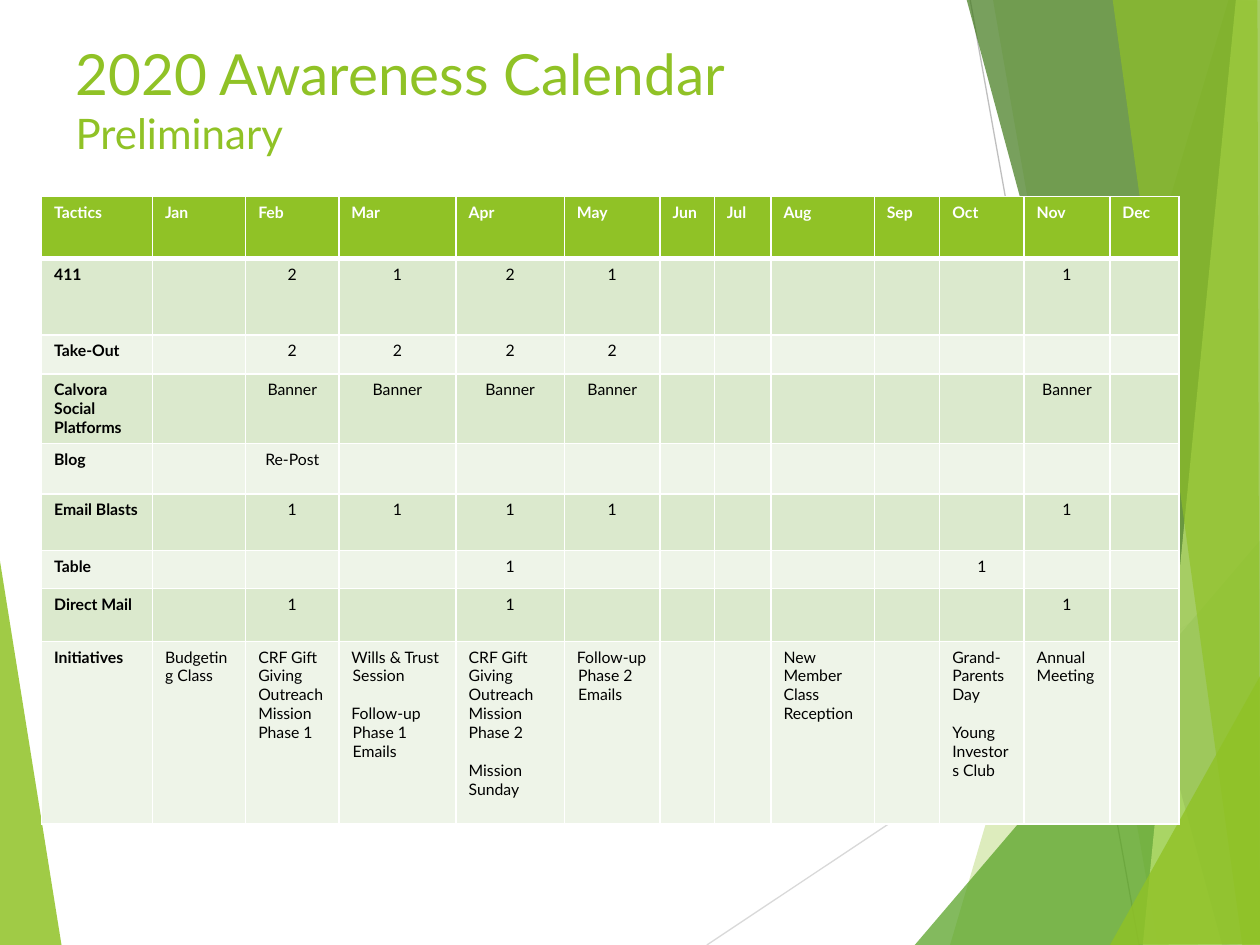
from lxml import etree
from pptx import Presentation
from pptx.dml.color import RGBColor
from pptx.enum.shapes import MSO_CONNECTOR
from pptx.enum.text import MSO_ANCHOR, MSO_AUTO_SIZE, PP_ALIGN
from pptx.oxml.ns import qn
from pptx.util import Pt

PX = 9144
FONT = "Lato"
GREEN = "90C226"
WHITE = "FFFFFF"


def rgb(value):
    return RGBColor.from_string(value)


def style_runs(paragraph, size, color, bold=False):
    for run in paragraph.runs:
        run.font.name = FONT
        run.font.size = Pt(size)
        run.font.bold = bold
        run.font.color.rgb = rgb(color)


presentation = Presentation()
presentation.slide_width = 1000 * PX
presentation.slide_height = 750 * PX
slide = presentation.slides.add_slide(presentation.slide_layouts[5])
shapes = slide.shapes

lines = [
    ((561, 750), (1001, 457), "D9D9D9"),
    ((770, 0), (904, 750), "BFBFBF"),
]
facets = [
    ([(-1, 439), (49, 751), (-1, 750)], GREEN, 85),
    ([(975, 0), (754, 750), (1002, 751), (1001, 1)], GREEN, 30),
    ([(788, -1), (919, 750), (1001, 750), (1001, -1)], GREEN, 20),
    ([(726, 750), (1000, 429), (1001, 750)], "54A021", 72),
    ([(767, -1), (970, 750), (1001, 749), (1001, -1)], "3F7819", 70),
    ([(981, -1), (907, 750), (1001, 750), (1000, -1)], "C0E474", 70),
    ([(883, -1), (986, 750), (1000, 750), (998, -1)], GREEN, 65),
    ([(881, 750), (1001, 535), (1001, 749)], GREEN, 80),
]

for (x1, y1), (x2, y2), color in lines:
    line = shapes.add_connector(MSO_CONNECTOR.STRAIGHT, x1 * PX, y1 * PX, x2 * PX, y2 * PX)
    line.line.color.rgb = rgb(color)
    line.line.width = Pt(0.75)
    etree.SubElement(line._element.spPr, qn("a:effectLst"))

for points, color, opacity in facets:
    builder = shapes.build_freeform(*points[0], scale=PX)
    builder.add_line_segments(points[1:], close=True)
    facet = builder.convert_to_shape()
    facet.shadow.inherit = False
    facet.line.fill.background()
    facet.fill.solid()
    facet.fill.fore_color.rgb = rgb(color)
    color_element = facet._element.spPr.find(".//" + qn("a:srgbClr"))
    etree.SubElement(color_element, qn("a:alpha"), val=str(opacity * 1000))

title = shapes.title
title.left, title.top, title.width, title.height = (n * PX for n in (50, 26, 900, 78))
title_frame = title.text_frame
title_frame.text = "2020 Awareness Calendar\vPreliminary"
title_frame.word_wrap = True
title_frame.auto_size = MSO_AUTO_SIZE.NONE
title_frame.vertical_anchor = MSO_ANCHOR.TOP
heading = title_frame.paragraphs[0]
heading.alignment = PP_ALIGN.LEFT
style_runs(heading, 32.4, GREEN)
heading.runs[1].font.size = Pt(24)
shapes._spTree.append(title._element)

months = ["Jan", "Feb", "Mar", "Apr", "May", "Jun", "Jul", "Aug", "Sep", "Oct", "Nov", "Dec"]
column_widths = [88, 74, 74, 93, 86, 76, 43, 45, 82, 52, 67, 68, 55]
tactics = [
    ("411", 61, {"Feb": "2", "Mar": "1", "Apr": "2", "May": "1", "Nov": "1"}),
    ("Take-Out", 31, dict.fromkeys(["Feb", "Mar", "Apr", "May"], "2")),
    ("Calvora Social Platforms", 55, dict.fromkeys(["Feb", "Mar", "Apr", "May", "Nov"], "Banner")),
    ("Blog", 40, {"Feb": "Re-Post"}),
    ("Email Blasts", 45, dict.fromkeys(["Feb", "Mar", "Apr", "May", "Nov"], "1")),
    ("Table", 30, {"Apr": "1", "Oct": "1"}),
    ("Direct Mail", 42, dict.fromkeys(["Feb", "Apr", "Nov"], "1")),
    ("Initiatives", 145, {
        "Jan": "Budgeting Class",
        "Feb": "CRF Gift Giving Outreach\nMission Phase 1",
        "Mar": "Wills & Trust Session\nFollow-up Phase 1 Emails",
        "Apr": "CRF Gift Giving Outreach\nMission Phase 2\nMission Sunday",
        "May": "Follow-up Phase 2 Emails",
        "Aug": "New Member Class Reception",
        "Oct": "Grand-Parents Day\nYoung Investors Club",
        "Nov": "Annual Meeting",
    }),
]
spaced_paragraphs = {"Follow-up Phase 1 Emails", "Mission Sunday", "Young Investors Club"}

rows = [["Tactics", *months]]
rows += [[name, *(entries.get(month, "") for month in months)] for name, height, entries in tactics]
row_heights = [49, *(height for name, height, entries in tactics)]

table = shapes.add_table(
    len(rows), len(column_widths), 33 * PX, 156 * PX, sum(column_widths) * PX, sum(row_heights) * PX
).table
for column, width in zip(table.columns, column_widths):
    column.width = width * PX
for row, height in zip(table.rows, row_heights):
    row.height = height * PX

for r, row in enumerate(rows):
    is_header = r == 0
    is_initiatives = r == len(rows) - 1
    fill_color = GREEN if is_header else ("DBE9CD" if r % 2 else "EEF4E8")
    border_widths = {"lnL": 1, "lnR": 1, "lnT": 3 if r == 1 else 1, "lnB": 3 if is_header else 1}
    for c, text in enumerate(row):
        cell = table.cell(r, c)
        cell_properties = cell._tc.get_or_add_tcPr()
        for tag, width in border_widths.items():
            border = etree.SubElement(cell_properties, qn("a:" + tag), w=str(Pt(width)))
            border_fill = etree.SubElement(border, qn("a:solidFill"))
            etree.SubElement(border_fill, qn("a:srgbClr"), val=WHITE)
        cell.fill.solid()
        cell.fill.fore_color.rgb = rgb(fill_color)
        cell.text_frame.text = text
        for paragraph in cell.text_frame.paragraphs:
            if not text:
                etree.SubElement(paragraph._p, qn("a:endParaRPr"), sz="900")
                continue
            centered = c > 0 and not is_header and not is_initiatives
            paragraph.alignment = PP_ALIGN.CENTER if centered else PP_ALIGN.LEFT
            style_runs(paragraph, 9, WHITE if is_header else "000000", is_header or c == 0)
            if paragraph.text in spaced_paragraphs:
                paragraph.space_before = Pt(10.8)
            if is_initiatives and rows[0][c] in ("Mar", "May"):
                paragraph_properties = paragraph._p.get_or_add_pPr()
                paragraph_properties.set("marL", str(PX))
                paragraph_properties.set("indent", str(-PX))

presentation.save("out.pptx")
